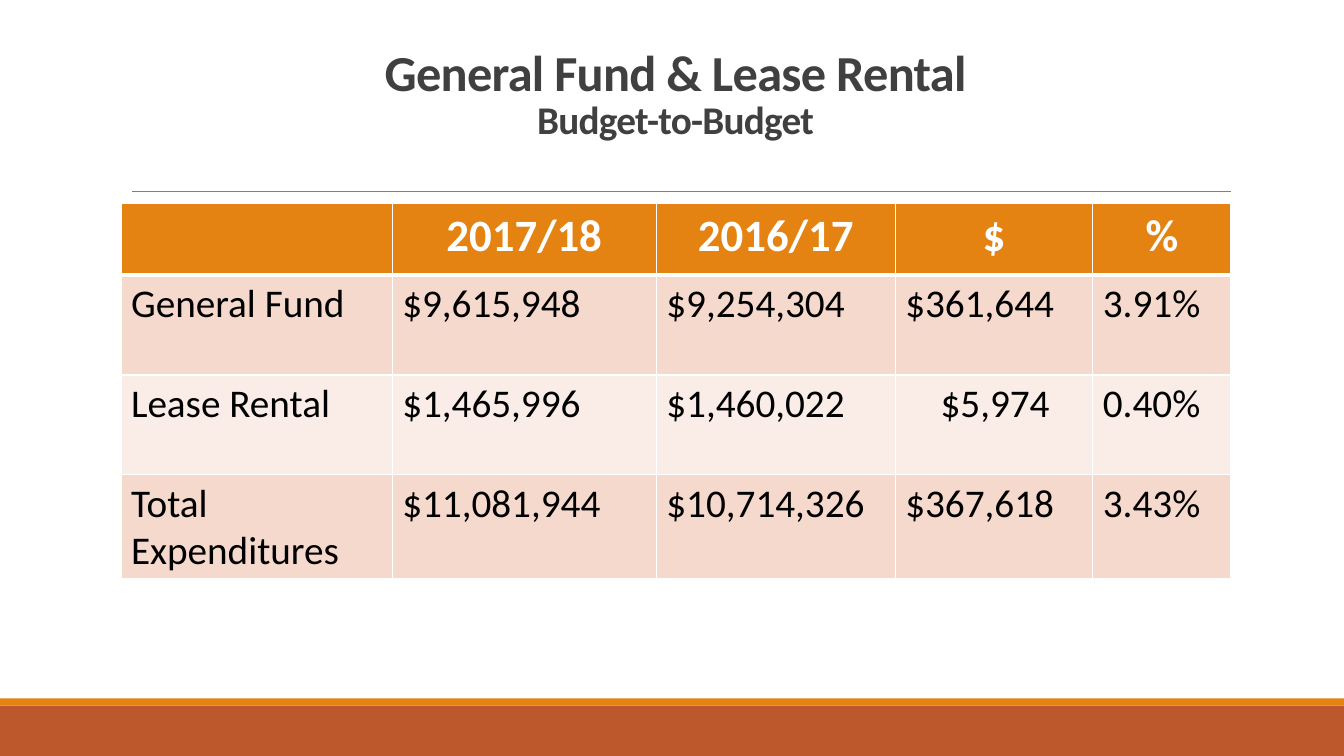
from pptx import Presentation
from pptx.dml.color import RGBColor
from pptx.enum.shapes import MSO_CONNECTOR, MSO_SHAPE
from pptx.enum.text import MSO_ANCHOR, PP_ALIGN
from pptx.oxml.ns import qn
from pptx.util import Pt
from lxml import etree

PX = 9144  # 100 px to the inch
STRAIGHT, RECT = MSO_CONNECTOR.STRAIGHT, MSO_SHAPE.RECTANGLE
BOTTOM, TOP = MSO_ANCHOR.BOTTOM, MSO_ANCHOR.TOP
CENTER, LEFT = PP_ALIGN.CENTER, PP_ALIGN.LEFT
COLORS = {"rust": "BD582C", "orange": "E48312", "band": "F5D9CC",
          "pale": "FAEDE7", "white": "FFFFFF", "black": "000000",
          "title": "404040", "rule": "808080"}
COLS = [269, 262, 237, 196, 137]
HEAD, BODY = 71, 99
ROWS = [
    ["", "2017/18", "2016/17", "$", "%"],
    ["General Fund", "$9,615,948", "$9,254,304", "$361,644", "3.91%"],
    ["Lease Rental", "$1,465,996", "$1,460,022", "$5,974", "0.40%"],
    ["Total Expenditures", "$11,081,944", "$10,714,326", "$367,618", "3.43%"],
]


def color(name):
    return RGBColor.from_string(COLORS[name])


def scale(*sizes):
    return [size * PX for size in sizes]


def style(item, **values):
    for key, value in values.items():
        setattr(item, key, value)


def write(par, text, size, tone, bold):
    run = par.add_run()
    run.text = text
    style(run.font, name="Calibri", size=Pt(size), bold=bold)
    run.font.color.rgb = color(tone)
    return run


def add_bar(slide, box, tone):
    bar = slide.shapes.add_shape(RECT, *scale(*box))
    bar.shadow.inherit = False
    bar.fill.solid()
    bar.fill.fore_color.rgb = color(tone)
    bar.line.fill.background()


def add_foot(slide, x, y, w, h):
    edge = 7
    add_bar(slide, (x, y + edge, w, h - edge), "rust")
    add_bar(slide, (x, y, w, edge), "orange")


def add_rule(slide, x, y, w):
    rule = slide.shapes.add_connector(STRAIGHT, *scale(x, y, x + w, y))
    rule.line.color.rgb = color("rule")
    rule.line.width = Pt(0.5)
    etree.SubElement(rule._element.spPr, qn("a:effectLst"))


def add_title(slide, x, y, w, h):
    frame = slide.shapes.add_textbox(*scale(x, y, w, h)).text_frame
    style(frame, word_wrap=True, vertical_anchor=BOTTOM, margin_bottom=49 * PX)
    par = frame.paragraphs[0]
    style(par, alignment=CENTER, line_spacing=0.85)
    first = write(par, "General Fund & Lease Rental", 36, "title", True)
    par.add_line_break()
    second = write(par, "Budget-to-Budget", 28, "title", True)
    for run in (first, second):
        run.font._element.set("spc", "-50")


def add_edges(cell, widths):
    props = cell._tc.get_or_add_tcPr()
    for side, width in zip("LRTB", widths):
        edge = etree.SubElement(props, qn("a:ln" + side), w=str(Pt(width)))
        fill = etree.SubElement(edge, qn("a:solidFill"))
        etree.SubElement(fill, qn("a:srgbClr"), val=COLORS["white"])


def fill_cell(cell, text, row):
    head = row == 0
    add_edges(cell, (1, 1, 3 if row == 1 else 1, 3 if head else 1))
    cell.fill.solid()
    tone = "orange" if head else "band" if row % 2 else "pale"
    cell.fill.fore_color.rgb = color(tone)
    style(cell, margin_left=10 * PX, margin_right=10 * PX,
          margin_top=5 * PX, margin_bottom=5 * PX, vertical_anchor=TOP)
    par = cell.text_frame.paragraphs[0]
    par.alignment = CENTER if head else LEFT
    if text:
        write(par, text, 32 if head else 28, "white" if head else "black", head)


def add_budget(slide, x, y):
    high = [HEAD] + [BODY] * (len(ROWS) - 1)
    box = scale(x, y, sum(COLS), sum(high))
    table = slide.shapes.add_table(len(ROWS), len(COLS), *box).table
    for col, width in zip(table.columns, COLS):
        col.width = width * PX
    for row, height in zip(table.rows, high):
        row.height = height * PX
    for r, texts in enumerate(ROWS):
        for c, text in enumerate(texts):
            fill_cell(table.cell(r, c), text, r)
    # Shift the short amount toward the others' right edge
    table.cell(2, 3).margin_left = 45 * PX


def main():
    deck = Presentation()
    wide, high = 1333, 750
    deck.slide_width, deck.slide_height = scale(wide, high)
    slide = deck.slides.add_slide(deck.slide_layouts[6])
    # Footer bars and rule
    add_foot(slide, 0, 693, wide, high - 693)
    add_rule(slide, 131, 190, 1090)
    # Title and table
    add_title(slide, 120, 31, 1100, 159)
    add_budget(slide, 120, 202)
    deck.save("out.pptx")


if __name__ == "__main__":
    main()
